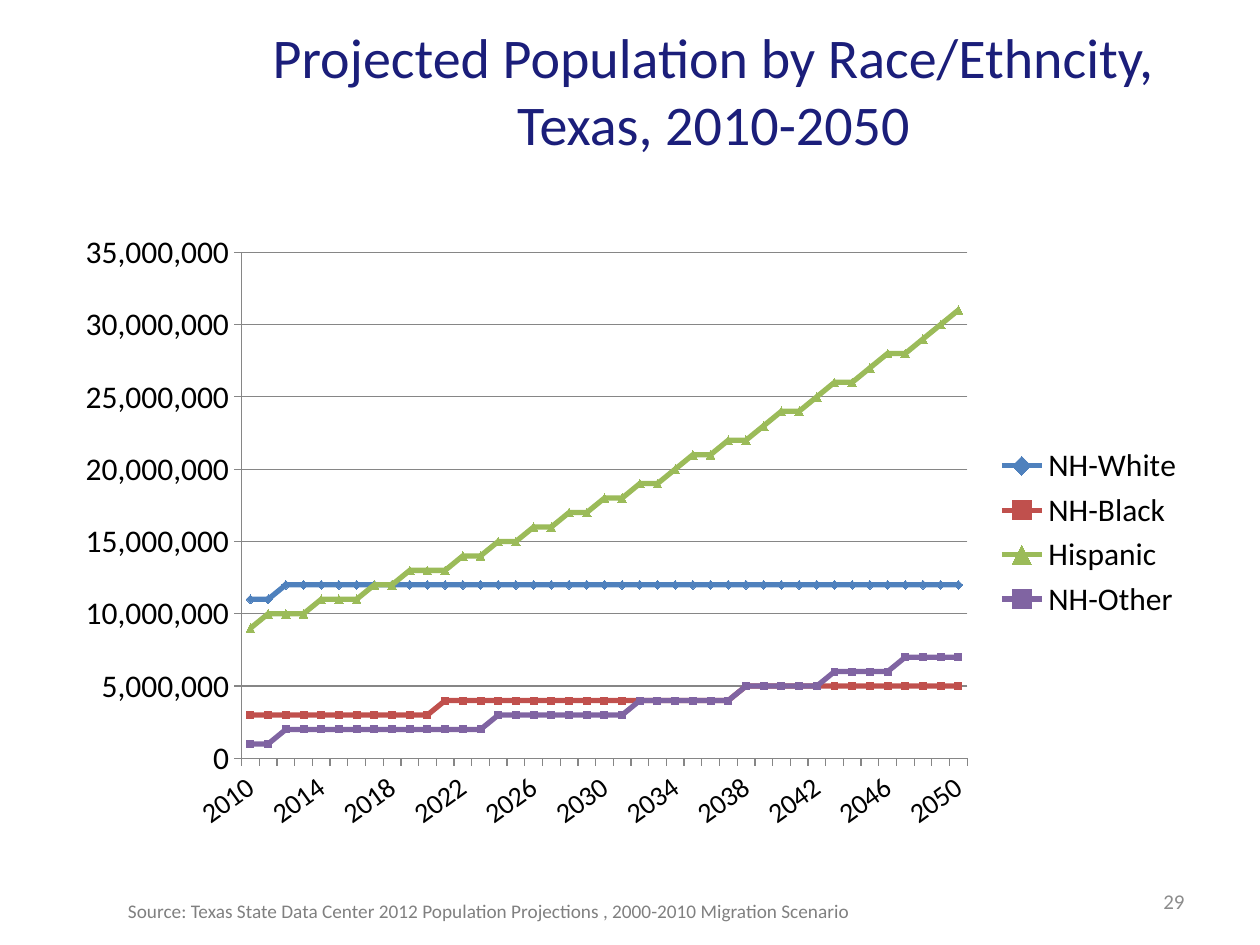
import pptx
import pptx.chart.data
import pptx.dml.color
import pptx.enum.chart
import pptx.enum.text
import pptx.oxml
import pptx.oxml.ns
import pptx.util
from pptx.util import Cm

FONT = "Calibri"
COLORS = {
    "title": "1B1E7A", "text": "000000", "number": "8C8C8C",
    "source": "808080", "axis": "868686",
    "NH-White": "4F81BD", "NH-Black": "C0504D",
    "Hispanic": "9BBB59", "NH-Other": "8064A2",
}
MARKERS = {
    "NH-White": ("DIAMOND", 5), "NH-Black": ("SQUARE", 4),
    "Hispanic": ("TRIANGLE", 5), "NH-Other": ("SQUARE", 4),
}
YEARS = range(2010, 2051)
MILLIONS = {
    "NH-White": [11] * 2 + [12] * 39,
    "NH-Black": [3] * 11 + [4] * 17 + [5] * 13,
    "Hispanic": [9, 10, 10, 10, 11, 11, 11, 12, 12, 13,
                 13, 13, 14, 14, 15, 15, 16, 16, 17, 17,
                 18, 18, 19, 19, 20, 21, 21, 22, 22, 23,
                 24, 24, 25, 26, 26, 27, 28, 28, 29, 30, 31],
    "NH-Other": [1] * 2 + [2] * 12 + [3] * 8 + [4] * 6 + [5] * 5 + [6] * 4 + [7] * 4,
}


def apply(target, values):
    """Set each named attribute on the target."""
    for name, value in values.items():
        setattr(target, name, value)


class SlideBuilder:
    """Hold the style and the current slide."""

    def __init__(self, slide, font, colors):
        """Keep the slide, the typeface and the palette."""
        self.slide, self.font, self.colors = slide, font, colors

    def rgb(self, key):
        """Return the palette colour for a key."""
        return pptx.dml.color.RGBColor.from_string(self.colors[key])

    def style_font(self, font, size, color):
        """Give a font its face, size and colour."""
        apply(font, {"name": self.font, "size": pptx.util.Pt(size)})
        font.color.rgb = self.rgb(color)

    def style_line(self, line, color, width):
        """Give a line its colour and width."""
        line.color.rgb = self.rgb(color)
        line.width = pptx.util.Pt(width)

    def text(self, words, box, size, color, align="LEFT", anchor="MIDDLE", hanging=0):
        """Add a wrapped one-paragraph text box."""
        frame = self.slide.shapes.add_textbox(*map(Cm, box)).text_frame
        apply(frame, {
            "word_wrap": True,
            "vertical_anchor": getattr(pptx.enum.text.MSO_ANCHOR, anchor),
        })
        paragraph = frame.paragraphs[0]
        paragraph.alignment = getattr(pptx.enum.text.PP_ALIGN, align)
        if hanging:
            properties = paragraph._p.get_or_add_pPr()
            properties.set("marL", str(Cm(hanging)))
            properties.set("indent", str(-Cm(hanging)))
        run = paragraph.add_run()
        run.text = words
        self.style_font(run.font, size, color)

    def line_chart(self, categories, series, markers, box, plot):
        """Add a line chart with markers and a legend on the right."""
        enums = pptx.enum.chart
        data = pptx.chart.data.CategoryChartData(number_format="#,##0")
        data.categories = [str(category) for category in categories]
        for name, millions in series.items():
            data.add_series(name, [value * 1_000_000 for value in millions])
        chart = self.slide.shapes.add_chart(
            enums.XL_CHART_TYPE.LINE_MARKERS, *map(Cm, box), data).chart
        apply(chart, {"has_title": False, "has_legend": True})
        self.style_font(chart.font, 18, "text")
        apply(chart.legend, {
            "position": enums.XL_LEGEND_POSITION.RIGHT, "include_in_layout": False})
        chart.plots[0].vary_by_categories = False
        self.axes(chart)
        self.plot_area(chart, plot)
        for line in chart.plots[0].series:
            style, size = markers[line.name]
            line.smooth = False
            self.style_line(line.format.line, line.name, 3)
            apply(line.marker, {
                "style": getattr(enums.XL_MARKER_STYLE, style), "size": size})
            line.marker.format.fill.solid()
            line.marker.format.fill.fore_color.rgb = self.rgb(line.name)
            self.style_line(line.marker.format.line, line.name, 0.75)

    def axes(self, chart):
        """Format the year axis and the population axis."""
        years, population = chart.category_axis, chart.value_axis
        for axis, size in ((years, 16), (population, 18)):
            axis.major_tick_mark = pptx.enum.chart.XL_TICK_MARK.OUTSIDE
            self.style_font(axis.tick_labels.font, size, "text")
            self.style_line(axis.format.line, "axis", 0.75)
        apply(population, {
            "minimum_scale": 0, "maximum_scale": 35_000_000,
            "major_unit": 5_000_000, "has_major_gridlines": True})
        self.style_line(population.major_gridlines.format.line, "axis", 0.75)
        apply(population.tick_labels, {
            "number_format": "#,##0", "number_format_is_linked": False})
        qn = pptx.oxml.ns.qn
        years._element.find(qn("c:txPr")).find(qn("a:bodyPr")).set("rot", "-2160000")
        skip = pptx.oxml.parse_xml(
            f'<c:tickLblSkip {pptx.oxml.ns.nsdecls("c")} val="4"/>')
        years._element.find(qn("c:noMultiLvlLbl")).addprevious(skip)

    def plot_area(self, chart, percents):
        """Fix the inner plot area as percentages of the chart."""
        parts = "".join(f'<c:{tag} val="{value / 100:.4f}"/>'
                        for tag, value in zip("xywh", percents))
        layout = pptx.oxml.parse_xml(
            f'<c:layout {pptx.oxml.ns.nsdecls("c")}><c:manualLayout>'
            '<c:layoutTarget val="inner"/><c:xMode val="edge"/><c:yMode val="edge"/>'
            f'{parts}</c:manualLayout></c:layout>')
        area = chart._chartSpace.chart.plotArea
        for old in area.findall(pptx.oxml.ns.qn("c:layout")):
            area.remove(old)
        area.insert(0, layout)


def main():
    """Build the population projection slide."""
    deck = pptx.Presentation()
    apply(deck, {"slide_width": Cm(25.4), "slide_height": Cm(19.05)})
    builder = SlideBuilder(deck.slides.add_slide(deck.slide_layouts[6]), FONT, COLORS)
    builder.text("Projected Population by Race/Ethncity, Texas, 2010-2050",
                 (4.44, 0.43, 19.89, 2.74), 32, "title", align="CENTER")
    builder.line_chart(YEARS, MILLIONS, MARKERS,
                       (1.27, 4.45, 22.86, 12.57), (15.75, 5.05, 64, 81.2))
    builder.text("29", (18.21, 17.65, 5.92, 1.02), 12, "number", align="RIGHT")
    builder.text("Source: Texas State Data Center 2012 Population Projections , "
                 "2000-2010 Migration Scenario",
                 (2.33, 18, 24.33, 0.74), 11, "source", anchor="TOP", hanging=2.21)
    deck.save("out.pptx")


if __name__ == "__main__":
    main()
